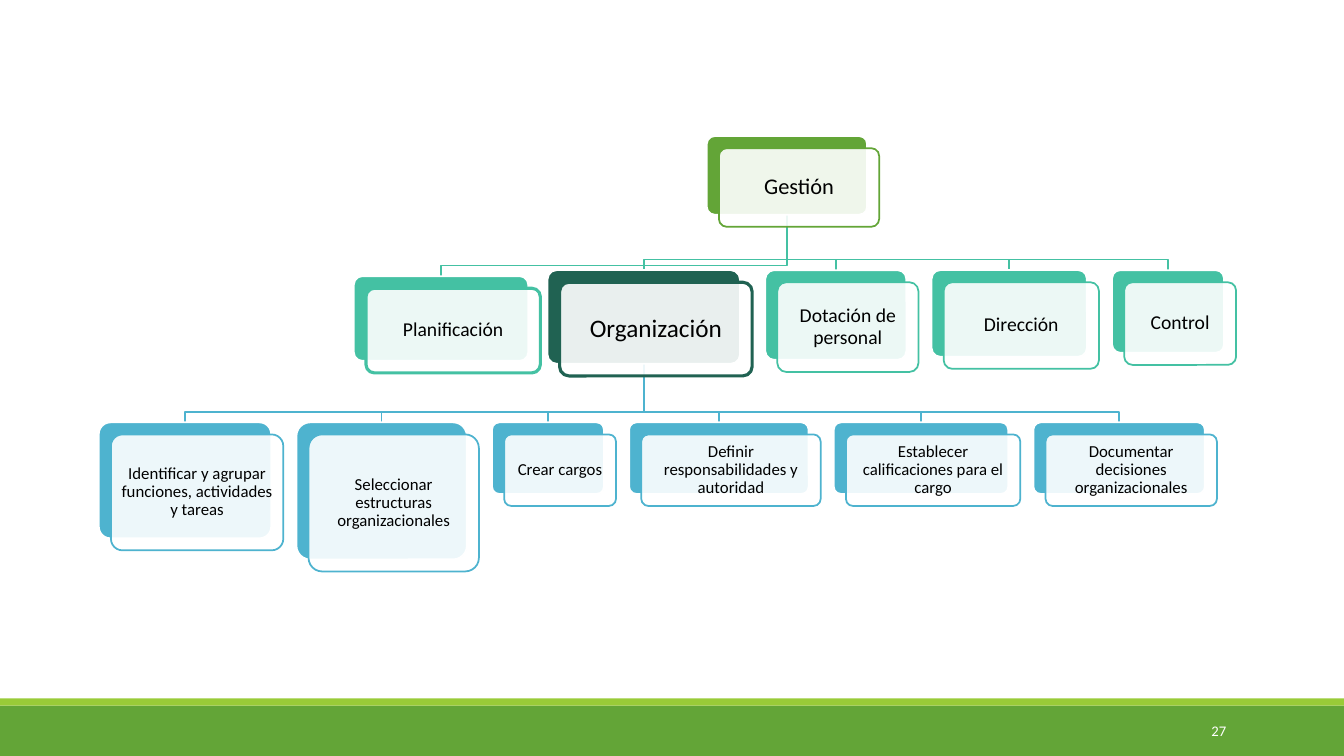
"""Build an organisation chart of the management functions on one slide."""
from lxml import etree
from pptx import Presentation
from pptx.dml.color import RGBColor
from pptx.enum.shapes import MSO_SHAPE
from pptx.enum.text import MSO_ANCHOR, PP_ALIGN
from pptx.oxml.ns import qn
from pptx.util import Inches, Pt

RECTANGLE, ROUNDED = MSO_SHAPE.RECTANGLE, MSO_SHAPE.ROUNDED_RECTANGLE
MIDDLE = MSO_ANCHOR.MIDDLE
CENTER, RIGHT = PP_ALIGN.CENTER, PP_ALIGN.RIGHT
COLORS = {
    "white": "FFFFFF", "black": "000000", "green": "63A537", "lime": "99CB38",
    "teal": "44C1A3", "dark teal": "206252", "blue": "4EB3CF",
}
COLUMNS, ROWS = 1333, 750
CELL = Inches(0.01)
GAP, OFFSET, BEND = 25, 12, 10.5


def paint(shape, fill, line=None, weight=1.25):
    shape.shadow.inherit = False
    if fill:
        shape.fill.solid()
        shape.fill.fore_color.rgb = RGBColor.from_string(COLORS[fill])
    else:
        shape.fill.background()
    if line:
        shape.line.color.rgb = RGBColor.from_string(COLORS[line])
        shape.line.width = Pt(weight)
    else:
        shape.line.fill.background()


def write(shape, text, size, color, align):
    frame = shape.text_frame
    frame.word_wrap = True
    frame.vertical_anchor = MIDDLE
    para = frame.paragraphs[0]
    para.alignment = align
    para.line_spacing = 0.9
    span = para.add_run()
    span.text = text
    span.font.name = "Calibri"
    span.font.size = Pt(size)
    span.font.color.rgb = RGBColor.from_string(COLORS[color])
    return frame


deck = Presentation()
deck.slide_width, deck.slide_height = COLUMNS * CELL, ROWS * CELL
page = deck.slides.add_slide(deck.slide_layouts[6])
shapes = page.shapes

for color, top, height in (("green", 700, 50), ("lime", 693, 7)):
    band = shapes.add_shape(RECTANGLE, 0, top * CELL, COLUMNS * CELL, height * CELL)
    paint(band, color)

number = shapes.add_textbox(1083 * CELL, 706 * CELL, 143 * CELL, 40 * CELL)
write(number, "27", 10.5, "white", RIGHT)

# Each level: left, top, parent, then (text, width, height, color, size, weight).
levels = [
    (701, 135, None, [("Gestión", 159, 78, "green", 16, 1.25)]),
    (351, 274, "Gestión", [("Planificación", 173, 84, "teal", 14, 2.25)]),
    (543, 268, "Gestión", [
        ("Organización", 191, 93, "dark teal", 18, 2.25),
        ("Dotación de personal", 140, 89, "teal", 14, 1.25),
        ("Dirección", 154, 86, "teal", 14, 1.25),
        ("Control", 111, 82, "teal", 14, 1.25),
    ]),
    (98, 419, "Organización", [
        ("Identificar y agrupar funciones, actividades y tareas", 171, 115, "blue", 12, 1.25),
        ("Seleccionar estructuras organizacionales", 169, 136, "blue", 12, 1.25),
        ("Crear cargos", 111, 71, "blue", 12, 1.25),
        ("Definir responsabilidades y autoridad", 178, 71, "blue", 12, 1.25),
        ("Establecer calificaciones para el cargo", 173, 71, "blue", 12, 1.25),
        ("Documentar decisiones organizacionales", 170, 71, "blue", 12, 1.25),
    ]),
]

cards = []
feet = {}
for left, top, parent, members in levels:
    for text, width, height, color, size, weight in members:
        center = left + width / 2
        feet[text] = (center, top + height)
        cards.append((left, top, width, height, text, color, size, weight))
        if parent:
            start, foot = feet[parent]
            elbow = shapes.build_freeform(int(start * CELL), int(foot * CELL))
            turn = top - BEND
            corners = [(start, turn), (center, turn), (center, top)]
            elbow.add_line_segments([(int(x * CELL), int(y * CELL)) for x, y in corners], close=False)
            paint(elbow.convert_to_shape(), None, "blue" if parent == "Organización" else "teal")
        left += width + GAP

for left, top, width, height, text, color, size, weight in cards:
    back = shapes.add_shape(ROUNDED, left * CELL, top * CELL, width * CELL, height * CELL)
    front = shapes.add_shape(
        ROUNDED, (left + OFFSET) * CELL, (top + OFFSET) * CELL, width * CELL, height * CELL)
    paint(back, color, "white")
    paint(front, "white", color, weight)
    for card in (back, front):
        card.adjustments[0] = 0.1
    tint = front.fill._xPr.find(qn("a:solidFill"))[0]
    etree.SubElement(tint, qn("a:alpha"), val="90000")
    frame = write(front, text, size, "black", CENTER)
    inset = round(size * 0.4) * CELL
    frame.margin_left = frame.margin_right = inset
    frame.margin_top = frame.margin_bottom = inset

deck.save("out.pptx")
